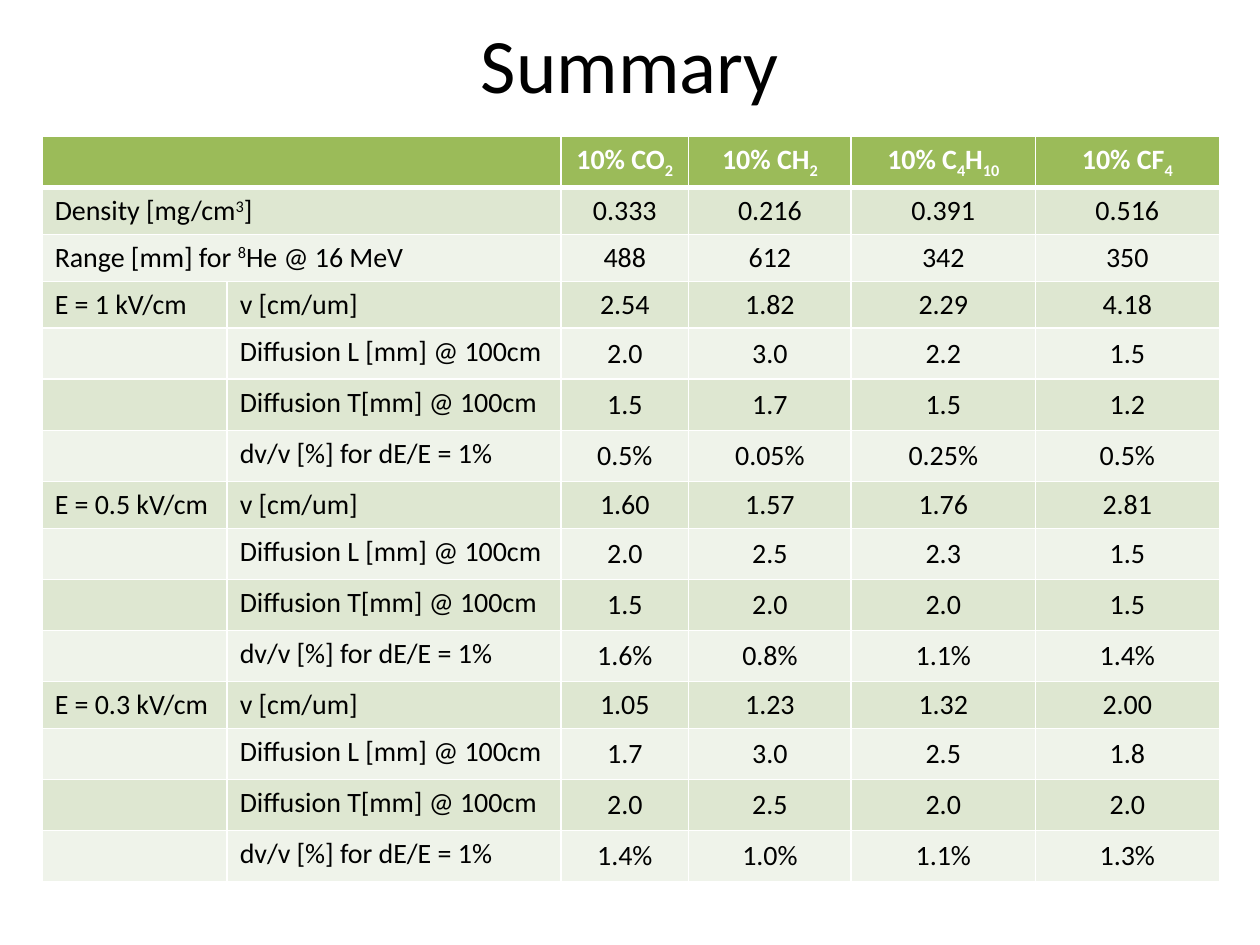
from lxml.etree import SubElement
from pptx import Presentation
from pptx.dml.color import RGBColor
from pptx.enum.text import MSO_ANCHOR as Anchor, PP_ALIGN as Align
from pptx.oxml.ns import qn
from pptx.util import Cm, Pt

FONT = "Calibri"
BLACK, WHITE = "000000", "FFFFFF"
HEADER_FILL = "9BBB59"
BAND_FILLS = ("DEE7D1", "EFF3EA")

TITLE = "Summary"
# "|" separates runs; "_" opens a subscript run and "^" a superscript run.
BASELINES = {"_": "-25000", "^": "30000"}
GASES = ["10% CO|_2", "10% CH|_2", "10% C|_4|H|_10", "10% CF|_4"]
GAS_PROPERTIES = [
    ("Density [mg/cm|^3|]", ["0.333", "0.216", "0.391", "0.516"]),
    ("Range [mm] for |^8|He @ 16 MeV", ["488", "612", "342", "350"]),
]
DRIFT_QUANTITIES = ["v [cm/um]", "Diffusion L [mm] @ 100cm",
                    "Diffusion T[mm] @ 100cm", "dv/v [%] for dE/E = 1%"]
DRIFT_VALUES = {
    "E = 1 kV/cm": [
        ["2.54", "1.82", "2.29", "4.18"],
        ["2.0", "3.0", "2.2", "1.5"],
        ["1.5", "1.7", "1.5", "1.2"],
        ["0.5%", "0.05%", "0.25%", "0.5%"],
    ],
    "E = 0.5 kV/cm": [
        ["1.60", "1.57", "1.76", "2.81"],
        ["2.0", "2.5", "2.3", "1.5"],
        ["1.5", "2.0", "2.0", "1.5"],
        ["1.6%", "0.8%", "1.1%", "1.4%"],
    ],
    "E = 0.3 kV/cm": [
        ["1.05", "1.23", "1.32", "2.00"],
        ["1.7", "3.0", "2.5", "1.8"],
        ["2.0", "2.5", "2.0", "2.0"],
        ["1.4%", "1.0%", "1.1%", "1.3%"],
    ],
}
COLUMN_WIDTHS = [3.73, 6.73, 2.57, 3.28, 3.71, 3.71]
ROW_HEIGHT = 0.89
LABEL_COLUMNS = 2


def style_font(font, size, color, bold=False):
    font.name = FONT
    font.size = Pt(size)
    font.bold = bold
    font.color.rgb = RGBColor.from_string(color)


def table_rows():
    """Header, gas properties, then one block of rows for each field strength."""
    rows = [["", ""] + GASES]
    rows += [[label, ""] + values for label, values in GAS_PROPERTIES]
    for field, block in DRIFT_VALUES.items():
        for index, (quantity, values) in enumerate(zip(DRIFT_QUANTITIES, block)):
            rows.append([field if index == 0 else "", quantity] + values)
    return rows


def write_runs(paragraph, markup, color, bold):
    for part in markup.split("|"):
        span = paragraph.add_run()
        span.text = part.lstrip("_^")
        style_font(span.font, 16, color, bold)
        if part[0] in BASELINES:
            span._r.get_or_add_rPr().set("baseline", BASELINES[part[0]])


def add_borders(cell, top, bottom):
    """Draw white borders; must run before the cell fill is set."""
    properties = cell._tc.get_or_add_tcPr()
    for side, width in (("L", 1), ("R", 1), ("T", top), ("B", bottom)):
        line = SubElement(properties, qn(f"a:ln{side}"), w=str(Pt(width)))
        fill = SubElement(line, qn("a:solidFill"))
        SubElement(fill, qn("a:srgbClr"), val=WHITE)


def format_cell(cell, row, column, markup):
    is_header = row == 0
    add_borders(cell, top=3 if row == 1 else 1, bottom=3 if is_header else 1)
    cell.fill.solid()
    fill = HEADER_FILL if is_header else BAND_FILLS[(row - 1) % 2]
    cell.fill.fore_color.rgb = RGBColor.from_string(fill)
    if not markup:
        return
    para = cell.text_frame.paragraphs[0]
    write_runs(para, markup, WHITE if is_header else BLACK, is_header)
    if column >= LABEL_COLUMNS:
        para.alignment = Align.CENTER
        if not is_header:
            cell.vertical_anchor = Anchor.MIDDLE


def add_title(page):
    title = page.shapes.title
    title.left, title.top, title.width, title.height = Cm(1.27), Cm(0), Cm(22.86), Cm(2.54)
    title.text_frame.text = TITLE
    title.text_frame.vertical_anchor = Anchor.MIDDLE
    para = title.text_frame.paragraphs[0]
    para.alignment = Align.CENTER
    style_font(para.runs[0].font, 44, BLACK)


def add_gas_table(page):
    rows = table_rows()
    table = page.shapes.add_table(
        len(rows), len(COLUMN_WIDTHS), Cm(0.85), Cm(2.75),
        Cm(sum(COLUMN_WIDTHS)), Cm(ROW_HEIGHT * len(rows))).table
    for column, width in zip(table.columns, COLUMN_WIDTHS):
        column.width = Cm(width)
    for r, texts in enumerate(rows):
        table.rows[r].height = Cm(ROW_HEIGHT)
        for c, markup in enumerate(texts):
            format_cell(table.cell(r, c), r, c, markup)
    for r in range(1 + len(GAS_PROPERTIES)):
        table.cell(r, 0).merge(table.cell(r, LABEL_COLUMNS - 1))


def main():
    deck = Presentation()
    deck.slide_width, deck.slide_height = Cm(25.4), Cm(19.05)
    page = deck.slides.add_slide(deck.slide_layouts.get_by_name("Title Only"))
    add_title(page)
    add_gas_table(page)
    deck.save("out.pptx")


if __name__ == "__main__":
    main()
